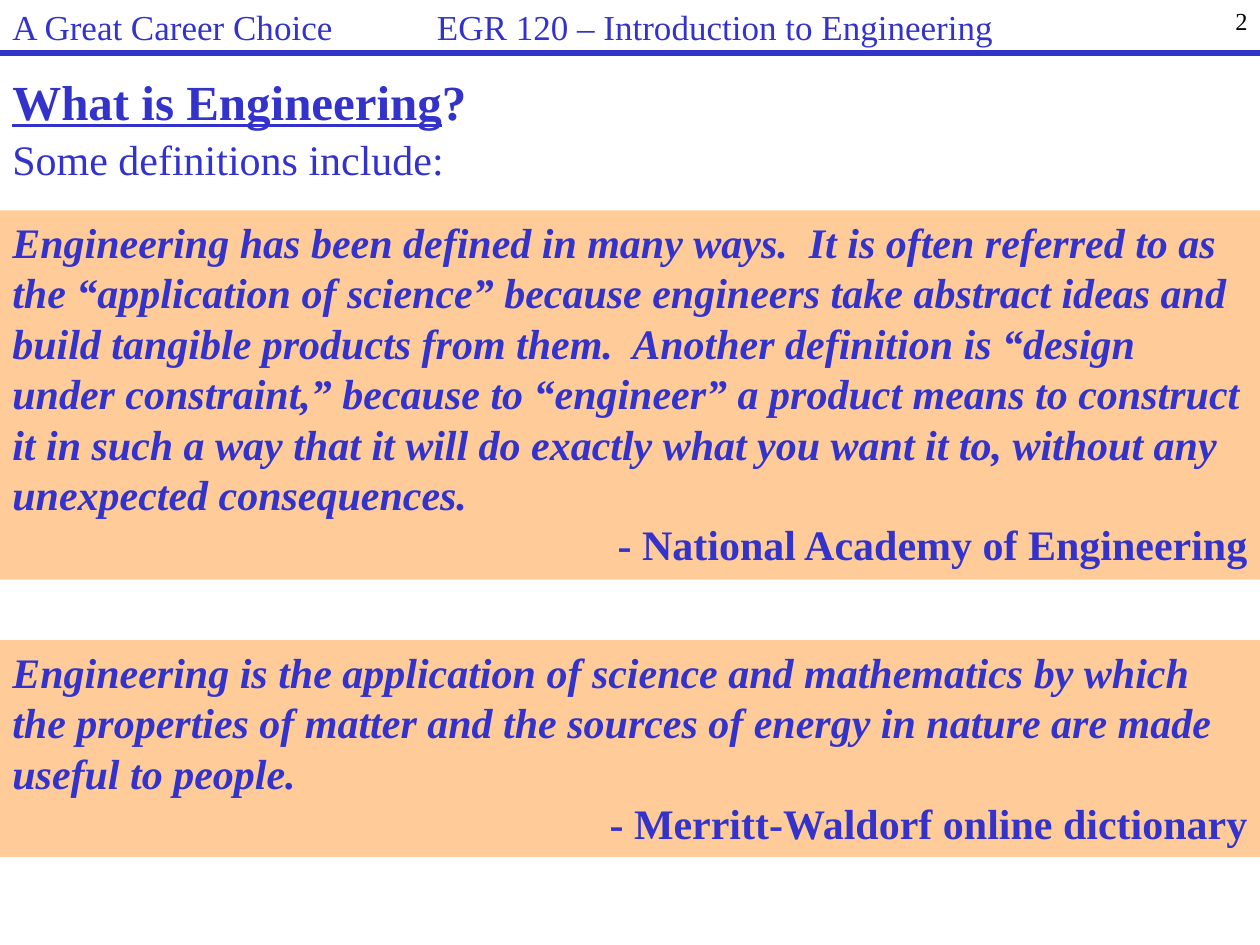
from lxml.etree import SubElement
from pptx import Presentation
from pptx.dml.color import RGBColor
from pptx.enum.shapes import MSO_CONNECTOR, MSO_SHAPE
from pptx.enum.text import MSO_ANCHOR as ANCHOR, PP_ALIGN as ALIGN
from pptx.oxml.ns import qn
from pptx.util import Inches, Pt

BLUE = RGBColor(0x33, 0x33, 0xCC)
PEACH = RGBColor(0xFF, 0xCC, 0x99)
BLACK = RGBColor(0x00, 0x00, 0x00)
FONT = "Times New Roman"
WIDTH, HEIGHT = 10, 7.5
COURSE_TAB = 3.37

ACADEMY_DEFINITION = (
    "Engineering has been defined in many ways.  It is often referred to as the "
    "“application of science” because engineers take abstract ideas and build tangible "
    "products from them.  Another definition is “design under constraint,” because to "
    "“engineer” a product means to construct it in such a way that it will do exactly "
    "what you want it to, without any unexpected consequences."
)
DICTIONARY_DEFINITION = (
    "Engineering is the application of science and mathematics by which the properties "
    "of matter and the sources of energy in nature are made useful to people."
)


def write(paragraph, text, size=24, color=BLUE, bold=False, italic=False,
          underline=False, align=ALIGN.LEFT, before=0, spacing=None):
    """Add a formatted run to the paragraph."""
    paragraph.alignment = align
    paragraph.space_before = Pt(before)
    if spacing:
        paragraph.line_spacing = spacing
    run = paragraph.add_run()
    run.text = text
    font = run.font
    font.name, font.size, font.color.rgb = FONT, Pt(size), color
    font.bold, font.italic, font.underline = bold, italic, underline


def text_frame(slide, box, anchor=ANCHOR.MIDDLE):
    frame = slide.shapes.add_textbox(*map(Inches, box)).text_frame
    frame.word_wrap = True
    frame.vertical_anchor = anchor
    return frame


def add_header(slide, box, lecture, course, number):
    left, top, width, height = box
    title = text_frame(slide, box).paragraphs[0]
    write(title, f"{lecture}\t{course}", size=20, before=4)
    tabs = SubElement(title._p.get_or_add_pPr(), qn("a:tabLst"))
    SubElement(tabs, qn("a:tab"), pos=str(Inches(COURSE_TAB)), algn="l")

    number_width = width * 0.2
    number_box = (left + width - number_width, top, number_width, height)
    write(text_frame(slide, number_box, ANCHOR.TOP).paragraphs[0], number,
          size=14, color=BLACK, align=ALIGN.RIGHT)

    bottom = Inches(top + height)
    rule = slide.shapes.add_connector(
        MSO_CONNECTOR.STRAIGHT, Inches(left), bottom, Inches(left + width), bottom)
    rule.line.color.rgb = BLUE
    rule.line.width = Pt(3)
    SubElement(rule._element.spPr, qn("a:effectLst"))


def add_heading(slide, box, topic, mark, lead_in):
    frame = text_frame(slide, box)
    question = frame.paragraphs[0]
    style = dict(size=28, bold=True, before=5.6, spacing=0.9)
    write(question, topic, underline=True, **style)
    write(question, mark, **style)
    write(frame.add_paragraph(), lead_in, before=4.8, spacing=0.9)


def add_definition(slide, box, definition, author):
    panel = slide.shapes.add_shape(MSO_SHAPE.RECTANGLE, *map(Inches, box))
    panel.shadow.inherit = False
    panel.fill.solid()
    panel.fill.fore_color.rgb = PEACH
    panel.line.fill.background()
    frame = panel.text_frame
    frame.word_wrap = True
    frame.vertical_anchor = ANCHOR.TOP
    write(frame.paragraphs[0], definition, bold=True, italic=True)
    write(frame.add_paragraph(), f"- {author}", bold=True, align=ALIGN.RIGHT)


def main():
    deck = Presentation()
    deck.slide_width, deck.slide_height = Inches(WIDTH), Inches(HEIGHT)
    slide = deck.slides.add_slide(deck.slide_layouts[6])
    add_heading(slide, (0, 0.58, WIDTH * 0.91, 0.92),
                "What is Engineering", "?", "Some definitions include:")
    add_definition(slide, (0, 1.67, WIDTH, 2.93),
                   ACADEMY_DEFINITION, "National Academy of Engineering")
    add_definition(slide, (0, 5.08, WIDTH, 1.72),
                   DICTIONARY_DEFINITION, "Merritt-Waldorf online dictionary")
    add_header(slide, (0, 0, WIDTH, 0.42), "A Great Career Choice",
               "EGR 120 – Introduction to Engineering", "2")
    deck.save("out.pptx")


if __name__ == "__main__":
    main()
